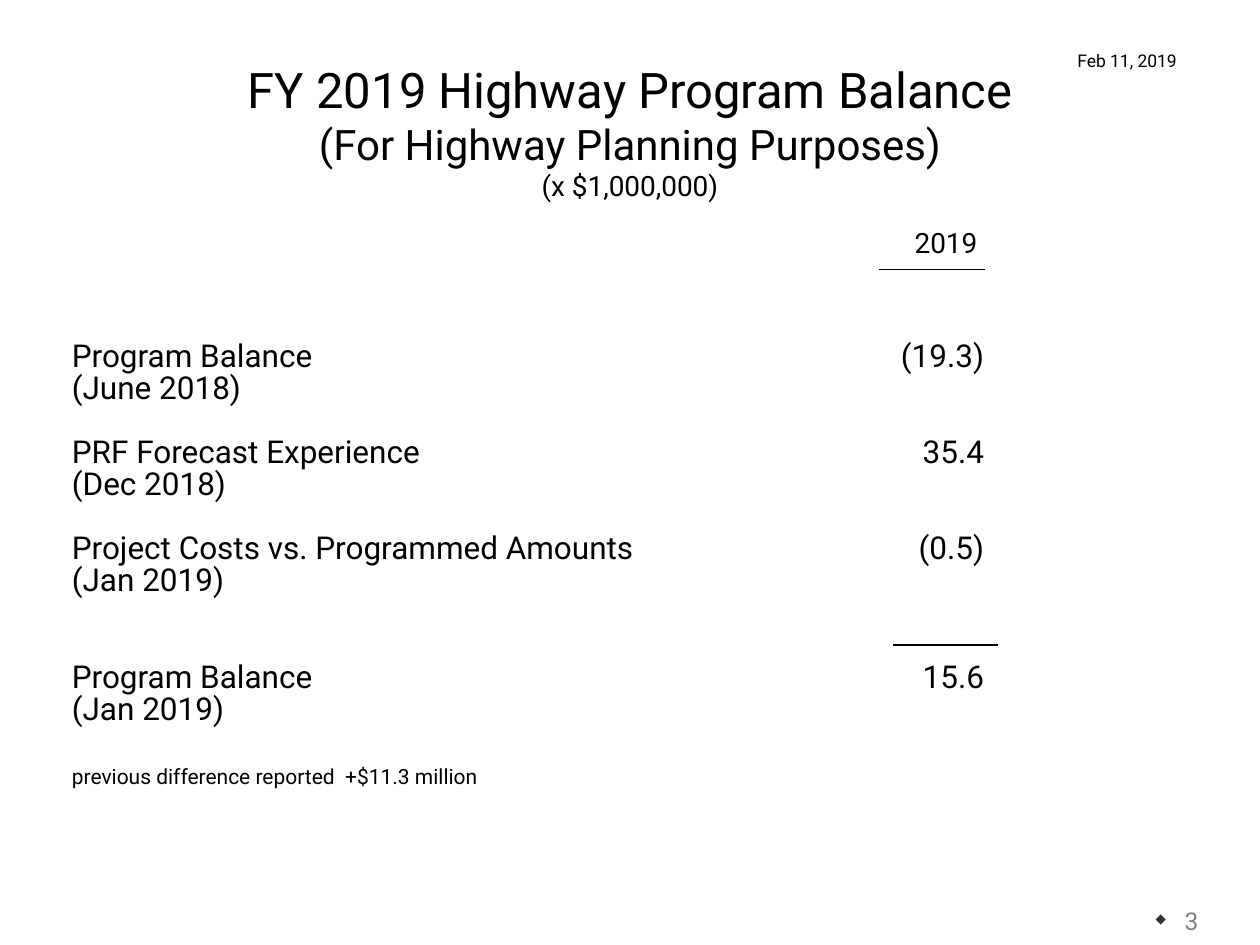
from dataclasses import dataclass

import pptx
import pptx.dml.color
import pptx.enum.shapes
import pptx.enum.text
import pptx.oxml
import pptx.oxml.ns
import pptx.util

Inches = pptx.util.Inches
Pt = pptx.util.Pt
ALIGN = pptx.enum.text.PP_ALIGN
ANCHOR = pptx.enum.text.MSO_ANCHOR

FONT = "Roboto"
COLORS = {"text": "000000", "number": "808080", "bullet": "333333"}
LINE_SPACING = 0.85


@dataclass
class Entry:
    label: str
    period: str
    amount: str
    space_before: float


@dataclass
class Rule:
    left: float
    right: float
    top: float


ENTRIES = [
    Entry("Program Balance", "(June 2018)", "(19.3)", 0),
    Entry("PRF Forecast Experience", "(Dec 2018)", "35.4", 18.3),
    Entry("Project Costs vs. Programmed Amounts", "(Jan 2019)", "(0.5)", 18.3),
    Entry("Program Balance", "(Jan 2019)", "15.6", 36.6),
]
HEADING = [
    ("FY 2019 Highway Program Balance", 28),
    ("(For Highway Planning Purposes)", 24),
    ("(x $1,000,000)", 16),
]
RULES = [Rule(6.98, 7.82, 2.14), Rule(7.09, 7.92, 5.12)]


def add_box(page, left: float, top: float, width: float, height: float):
    box = page.shapes.add_textbox(
        Inches(left), Inches(top), Inches(width), Inches(height))
    box.text_frame.word_wrap = True
    return box


def write(frame, text: str, size: float, align=ALIGN.LEFT, color: str = "text"):
    """Fill the frame's empty first paragraph, or add one after the last."""
    para = frame.paragraphs[-1]
    if para.runs:
        para = frame.add_paragraph()
    para.alignment = align
    span = para.add_run()
    span.text = text
    span.font.name = FONT
    span.font.size = Pt(size)
    span.font.color.rgb = pptx.dml.color.RGBColor.from_string(COLORS[color])
    return para


def append_xml(parent, body: str) -> None:
    namespace = pptx.oxml.ns.nsdecls("a")
    parent.append(pptx.oxml.parse_xml(body.replace("/>", f" {namespace}/>", 1)
                                      if body.endswith("/>") and body.count("<") == 1
                                      else body.replace(">", f" {namespace}>", 1)))


def add_tab(para, position: float, align: str) -> None:
    append_xml(para._p.get_or_add_pPr(),
               f'<a:tabLst><a:tab pos="{Inches(position)}" algn="{align}"/></a:tabLst>')


def add_diamond_bullet(para) -> None:
    properties = para._p.get_or_add_pPr()
    properties.set("marL", str(Inches(0.23)))
    properties.set("indent", str(-Inches(0.23)))
    append_xml(properties,
               f'<a:buClr><a:srgbClr val="{COLORS["bullet"]}"/></a:buClr>')
    append_xml(properties, '<a:buSzPct val="55000"/>')
    append_xml(properties, '<a:buChar char="◆"/>')


def add_heading(page) -> None:
    title = page.shapes.title
    title.left, title.top = Inches(0), Inches(0.42)
    title.width, title.height = Inches(10), Inches(1.5)
    frame = title.text_frame
    frame.auto_size = pptx.enum.text.MSO_AUTO_SIZE.NONE
    frame.vertical_anchor = ANCHOR.TOP
    for text, size in HEADING:
        write(frame, text, size, ALIGN.CENTER)


def add_balance(page) -> None:
    frame = add_box(page, 0.15, 2.56, 9.75, 4.67).text_frame
    frame.margin_left = Inches(0.42)
    frame.margin_top = Inches(0.15)
    for entry in ENTRIES:
        para = write(frame, f"{entry.label}\t{entry.amount}", 18)
        para.space_before = Pt(entry.space_before)
        para.line_spacing = LINE_SPACING
        add_tab(para, 7.24, "r")
        write(frame, entry.period, 18).line_spacing = LINE_SPACING
    note = write(frame, "previous difference reported  +$11.3 million", 12)
    note.space_before = Pt(23)
    note.line_spacing = LINE_SPACING


def add_rule(page, rule: Rule) -> None:
    line = page.shapes.add_connector(
        pptx.enum.shapes.MSO_CONNECTOR.STRAIGHT,
        Inches(rule.left), Inches(rule.top), Inches(rule.right), Inches(rule.top))
    line.line.width = Pt(0.75)
    line.line.color.rgb = pptx.dml.color.RGBColor.from_string(COLORS["text"])
    append_xml(line._element.spPr, "<a:effectLst/>")


def main() -> None:
    deck = pptx.Presentation()
    deck.slide_width, deck.slide_height = Inches(10), Inches(7.5)
    page = deck.slides.add_slide(deck.slide_layouts[5])

    add_heading(page)
    add_balance(page)
    year = add_box(page, 0.16, 1.74, 9.84, 0.64)
    add_tab(write(year.text_frame, "\t2019", 16), 7.25, "ctr")
    for rule in RULES:
        add_rule(page, rule)
    date = add_box(page, 8.15, 0.35, 1.59, 0.27)
    write(date.text_frame, "Feb 11, 2019", 10, ALIGN.CENTER)

    number = add_box(page, 7.21, 6.97, 2.4, 0.5)
    number.text_frame.vertical_anchor = ANCHOR.BOTTOM
    add_diamond_bullet(write(number.text_frame, "3", 14, ALIGN.RIGHT, "number"))
    deck.save("out.pptx")


if __name__ == "__main__":
    main()
